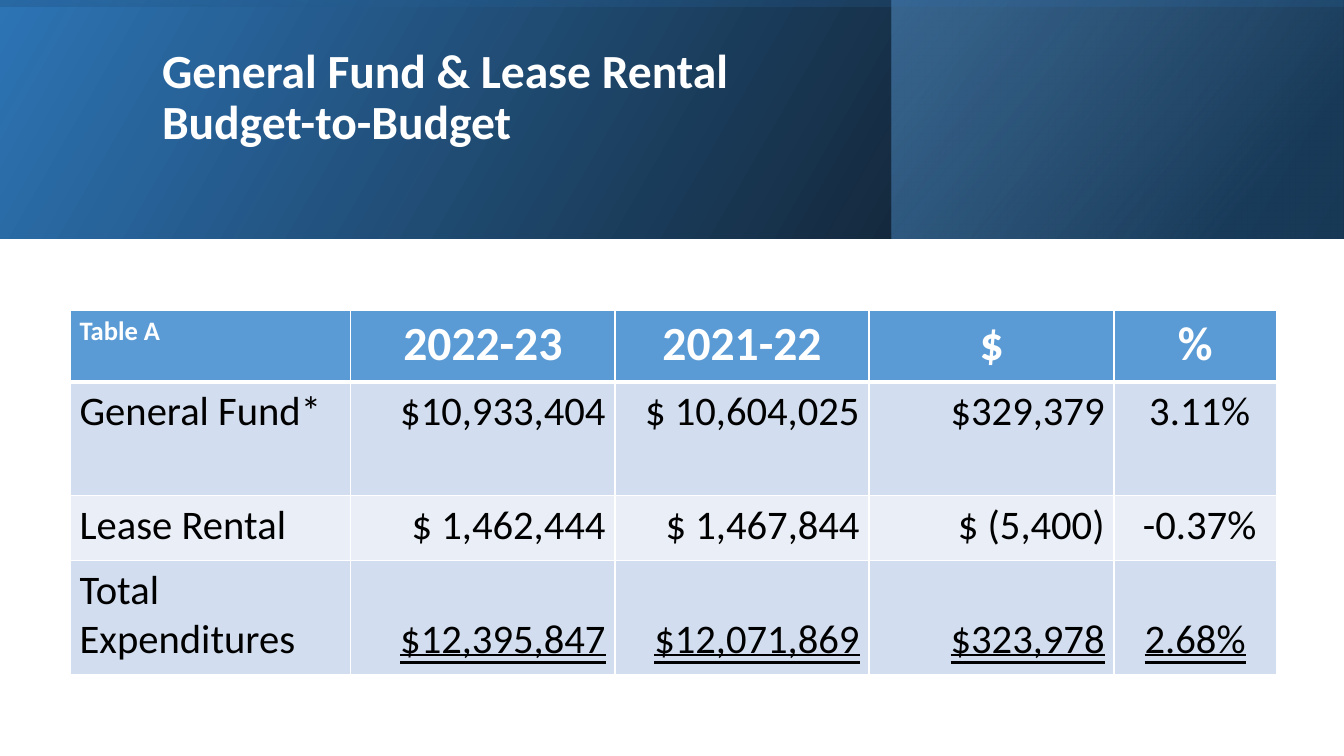
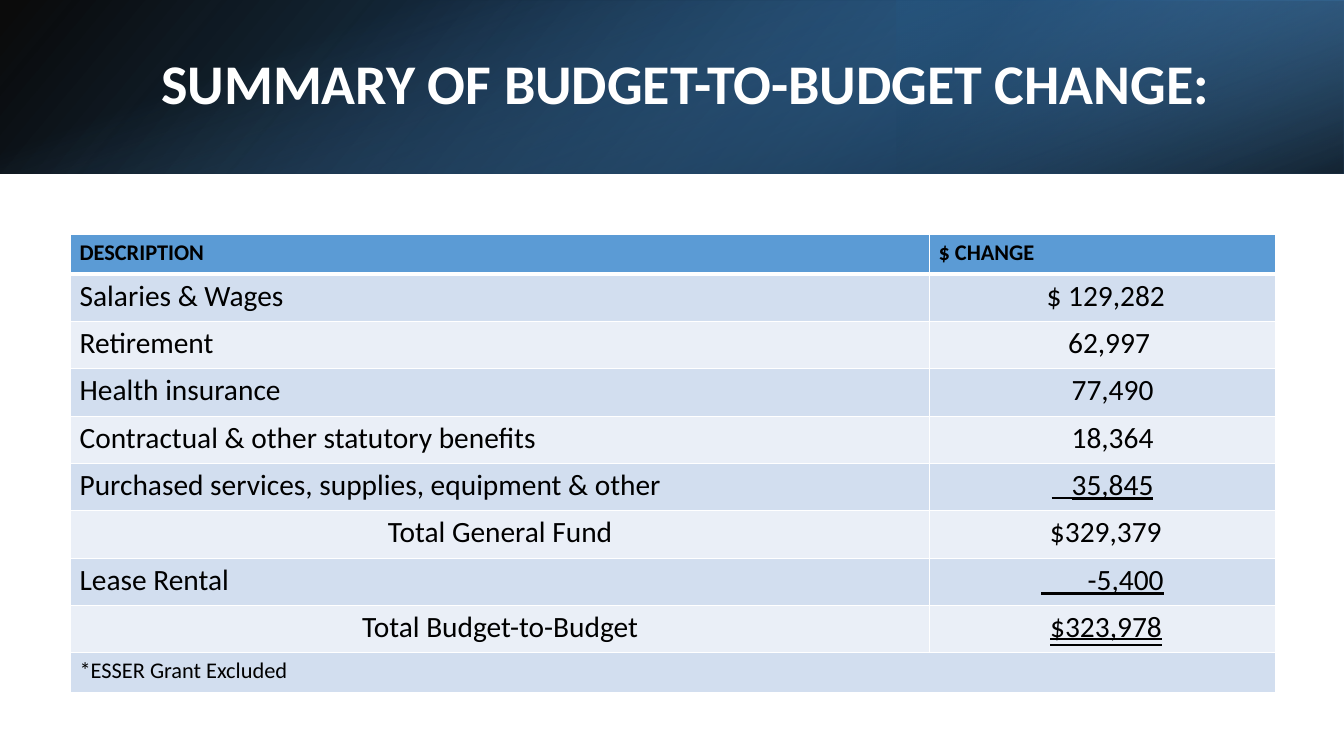
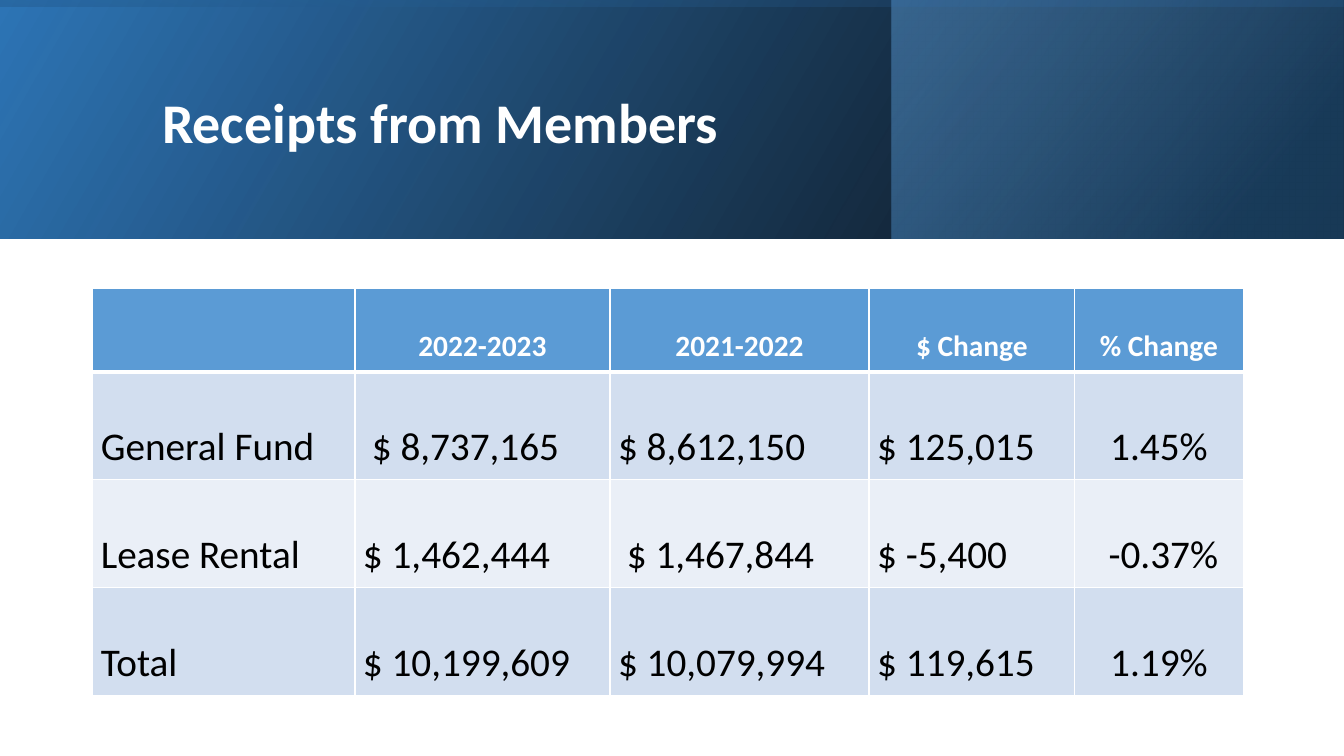
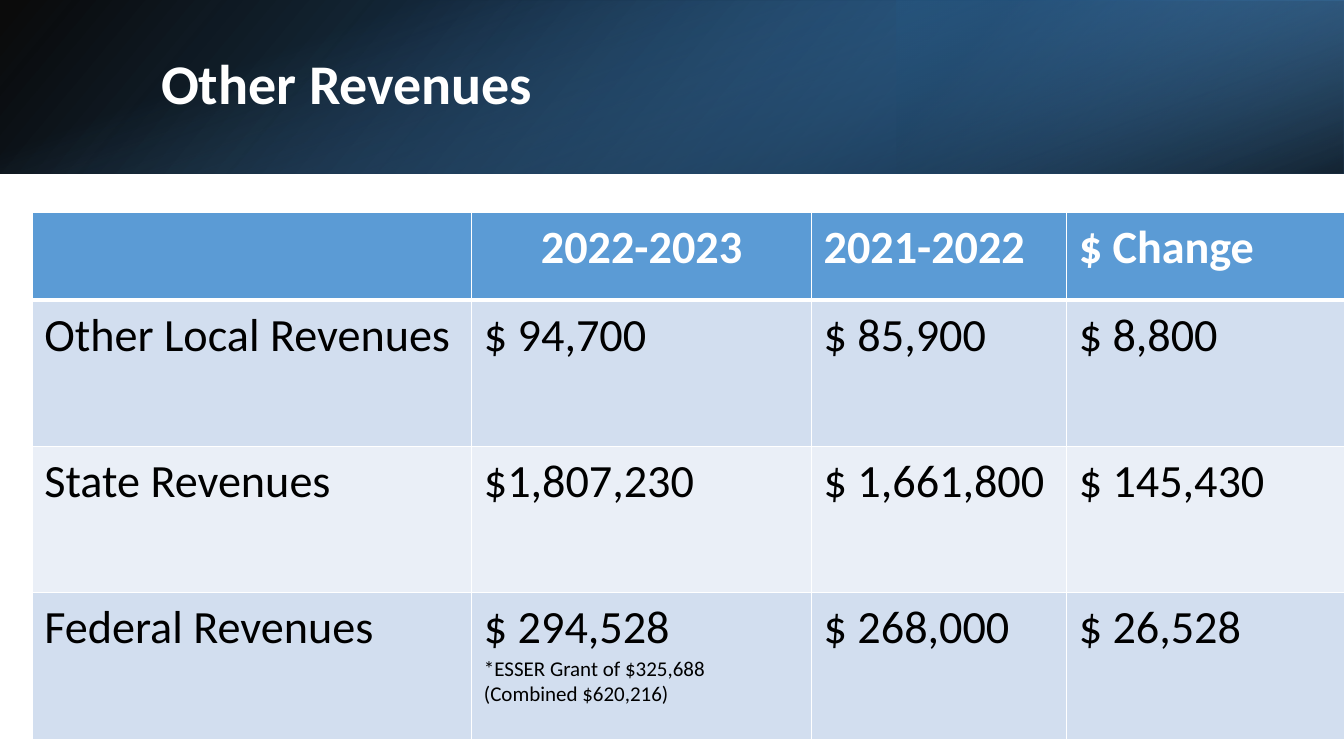
from dataclasses import dataclass

from lxml import etree
from pptx import Presentation
from pptx.dml.color import RGBColor
from pptx.enum.shapes import MSO_SHAPE
from pptx.enum.text import MSO_ANCHOR, MSO_UNDERLINE, PP_ALIGN
from pptx.oxml.ns import qn
from pptx.util import Pt

PX_PER_INCH = 100
EMU_PER_PX = 914400 // PX_PER_INCH
SLIDE_WIDTH, SLIDE_HEIGHT = 1333, 750
FONT, NARROW_FONT = "Calibri", "Arial Narrow"
LINE_HEIGHT = 1.22

WHITE = RGBColor(0xFF, 0xFF, 0xFF)
BLACK = RGBColor(0x00, 0x00, 0x00)
NAVY = RGBColor(0x1F, 0x4E, 0x79)
BLUE = RGBColor(0x2E, 0x75, 0xB6)
SKY = RGBColor(0x5B, 0x9B, 0xD5)
DARK_BAND = RGBColor(0xD2, 0xDE, 0xEF)
LIGHT_BAND = RGBColor(0xEA, 0xEF, 0xF7)

RECTANGLE = MSO_SHAPE.RECTANGLE
MIDDLE = MSO_ANCHOR.MIDDLE
LEFT, CENTER, RIGHT = PP_ALIGN.LEFT, PP_ALIGN.CENTER, PP_ALIGN.RIGHT
SINGLE, DOUBLE = MSO_UNDERLINE.SINGLE_LINE, MSO_UNDERLINE.DOUBLE_LINE


@dataclass
class Band:
    box: tuple
    stops: tuple
    angle: int
    rotation: int = 0
    flipped: bool = True


@dataclass
class Header:
    bands: tuple
    title_box: tuple


TALL_HEADER = Header(
    (
        Band((0, 0, 1333, 237), ((0, BLACK, 96), (100, BLUE, 100)), 330),
        Band((884, 0, 448, 237), ((19, NAVY, 68), (100, SKY, 48)), 320),
        Band((548, -548, 237, 1333), ((23, BLUE, 16), (99, BLACK, 45)), 350, 270),
    ),
    (151, 38, 1063, 172),
)
SHORT_HEADER = Header(
    (
        Band((0, 0, 1333, 172), ((0, BLACK, 96), (100, BLUE, 100)), 140),
        Band((889, 0, 444, 172), ((19, NAVY, 68), (100, SKY, 79)), 320, 180),
        Band((580, -580, 172, 1333), ((23, SKY, 0), (99, BLACK, 74)), 340, 90, False),
    ),
    (150, 38, 1098, 96),
)


def px(length):
    return length * EMU_PER_PX


def line_px(size):
    return round(size * LINE_HEIGHT / 72 * PX_PER_INCH)


def format_run(run, size, color=BLACK, bold=False, underline=None, font=FONT):
    run.font.name = font
    run.font.size = Pt(size)
    run.font.bold = bold
    run.font.underline = underline
    run.font.color.rgb = color


def add_band(slide, band):
    shape = slide.shapes.add_shape(RECTANGLE, *map(px, band.box))
    shape.shadow.inherit = False
    shape.line.fill.background()
    shape.rotation = band.rotation
    properties = shape._element.spPr
    if band.flipped:
        properties.find(qn("a:xfrm")).set("flipH", "1")
    shape.fill.gradient()
    shape.fill.gradient_angle = 360 - band.angle
    for stop, (position, color, _) in zip(shape.fill.gradient_stops, band.stops):
        stop.position = position / 100
        stop.color.rgb = color
    colors = properties.find(qn("a:gradFill")).iter(qn("a:srgbClr"))
    for color, (_, _, opacity) in zip(list(colors), band.stops):
        etree.SubElement(color, qn("a:alpha")).set("val", str(opacity * 1000))


def add_header(slide, header, title, size=40, lift=0):
    for band in header.bands:
        add_band(slide, band)
    frame = slide.shapes.add_textbox(*map(px, header.title_box)).text_frame
    frame.word_wrap = True
    frame.vertical_anchor = MIDDLE
    frame.margin_bottom = px(5 + lift)
    frame.text = title
    for paragraph in frame.paragraphs:
        paragraph.line_spacing = 0.9
        for run in paragraph.runs:
            format_run(run, size, WHITE, True)


def set_borders(cell, top, bottom):
    properties = cell._tc.get_or_add_tcPr()
    for side, width in (("L", 1), ("R", 1), ("T", top), ("B", bottom)):
        border = etree.SubElement(properties, qn(f"a:ln{side}"))
        border.set("w", str(Pt(width)))
        fill = etree.SubElement(border, qn("a:solidFill"))
        etree.SubElement(fill, qn("a:srgbClr")).set("val", str(WHITE))


def add_grid(slide, left, top, columns, rows, margins):
    grid = slide.shapes.add_table(
        len(rows), len(columns), px(left), px(top), px(sum(columns)), px(sum(rows))
    ).table
    for column, width in zip(grid.columns, columns):
        column.width = px(width)
    side, edge = margins
    for index, (row, height) in enumerate(zip(grid.rows, rows)):
        row.height = px(height)
        band = SKY if index == 0 else DARK_BAND if index % 2 else LIGHT_BAND
        for cell in row.cells:
            cell.margin_left = cell.margin_right = px(side)
            cell.margin_top = cell.margin_bottom = px(edge)
            set_borders(cell, 3 if index == 1 else 1, 3 if index == 0 else 1)
            cell.fill.solid()
            cell.fill.fore_color.rgb = band
    return grid


def write_cell(cell, text, align, size, color=BLACK, bold=False, underline=None, drop=0, indent=0):
    cell.margin_top += px(drop)
    cell.margin_left += px(indent)
    cell.text_frame.text = text
    for paragraph in cell.text_frame.paragraphs:
        paragraph.alignment = align
        for run in paragraph.runs:
            format_run(run, size, color, bold, underline)


def write_row(row, texts, aligns, size, **style):
    for cell, text, align in zip(row.cells, texts, aligns):
        if text:
            write_cell(cell, text, align, size, **style)


def add_budget_slide(slide):
    add_header(slide, TALL_HEADER, "General Fund & Lease Rental\nBudget-to-Budget", 34, 52)
    grid = add_grid(slide, 70, 308, (278, 262, 252, 243, 161), (71, 113, 64, 113), (9, 5))
    heading, general, lease, total = grid.rows
    aligns = (LEFT, RIGHT, RIGHT, RIGHT, CENTER)
    write_cell(heading.cells[0], "Table A", LEFT, 19, WHITE, True)
    write_row(heading, ("", "2022-23", "2021-22", "$", "%"), (CENTER,) * 5, 34,
              color=WHITE, bold=True)
    write_row(general, ("General Fund*", "$10,933,404", "$ 10,604,025", "$329,379", " 3.11%"),
              aligns, 29)
    write_row(lease, ("Lease Rental", "$ 1,462,444", "$ 1,467,844", "$ (5,400)", " -0.37%"),
              aligns, 29)
    write_cell(total.cells[0], "Total Expenditures", LEFT, 29)
    write_row(total, ("", "$12,395,847", "$12,071,869", "$323,978", "2.68%"), aligns, 29,
              underline=DOUBLE, drop=line_px(29))


def add_summary_slide(slide):
    add_header(slide, SHORT_HEADER, "SUMMARY OF BUDGET-TO-BUDGET CHANGE:")
    grid = add_grid(slide, 70, 233, (852, 343), (39, *(47,) * 8, 39), (9, 4))
    write_row(grid.rows[0], ("DESCRIPTION", "$ CHANGE"), (LEFT, LEFT), 16, bold=True)
    changes = (
        ("Salaries & Wages", LEFT, " $ 129,282", None, 0),
        ("Retirement", LEFT, "62,997", None, 13),
        ("Health insurance", LEFT, "77,490", None, 20),
        ("Contractual & other statutory benefits", LEFT, "18,364", None, 20),
        ("Purchased services, supplies, equipment & other", LEFT, "   ", SINGLE, 0),
        ("Total General Fund", CENTER, " $329,379", None, 0),
        ("Lease Rental", LEFT, "       -5,400", SINGLE, 0),
        ("Total Budget-to-Budget", CENTER, "$323,978", DOUBLE, 7),
    )
    for index, (description, align, change, underline, indent) in enumerate(changes, 1):
        write_cell(grid.cell(index, 0), description, align, 21)
        write_cell(grid.cell(index, 1), change, CENTER, 21, underline=underline, indent=indent)
    purchases = grid.cell(5, 1).text_frame.paragraphs[0]
    purchases.runs[0].font.name = NARROW_FONT
    amount = purchases.add_run()
    amount.text = "35,845"
    format_run(amount, 21, underline=SINGLE)
    footnote = grid.cell(9, 0)
    footnote.merge(grid.cell(9, 1))
    write_cell(footnote, "*ESSER Grant Excluded", LEFT, 16)


def add_receipts_slide(slide):
    add_header(slide, TALL_HEADER, "Receipts from Members")
    grid = add_grid(slide, 92, 286, (260, 253, 257, 204, 167), (83, 107, 107, 107), (8, 4))
    write_row(grid.rows[0], ("", "2022-2023", "2021-2022", "$ Change", "% Change"),
              (CENTER,) * 5, 21, color=WHITE, bold=True, drop=line_px(21))
    receipts = (
        ("General Fund", " $ 8,737,165", "$ 8,612,150", "$ 125,015", "1.45%"),
        ("Lease Rental", "$ 1,462,444", " $ 1,467,844", "$ -5,400", " -0.37%"),
        ("Total", "$ 10,199,609", "$ 10,079,994", "$ 119,615", "1.19%"),
    )
    for index, texts in enumerate(receipts, 1):
        write_row(grid.rows[index], texts, (LEFT,) * 4 + (CENTER,), 28, drop=line_px(28))


def add_revenues_slide(slide):
    add_header(slide, SHORT_HEADER, "Other Revenues")
    grid = add_grid(slide, 32, 211, (436, 337, 253, 285), (87, 145, 145, 146), (12, 7))
    write_row(grid.rows[0], ("", "2022-2023", "2021-2022", "$ Change"),
              (LEFT, CENTER, LEFT, LEFT), 33, color=WHITE, bold=True)
    revenues = (
        ("Other Local Revenues", "$ 94,700", "$ 85,900", "$ 8,800"),
        ("State Revenues", "$1,807,230", "$ 1,661,800", "$ 145,430"),
        ("Federal Revenues", "$ 294,528", "$ 268,000", "$ 26,528"),
    )
    for index, texts in enumerate(revenues, 1):
        write_row(grid.rows[index], texts, (LEFT,) * 4, 33)
    grant = grid.cell(3, 1).text_frame.add_paragraph()
    grant.text = "*ESSER Grant of $325,688 (Combined $620,216)"
    format_run(grant.runs[0], 15)


def main():
    deck = Presentation()
    deck.slide_width, deck.slide_height = px(SLIDE_WIDTH), px(SLIDE_HEIGHT)
    blank = deck.slide_layouts[6]
    for build in (add_budget_slide, add_summary_slide, add_receipts_slide, add_revenues_slide):
        build(deck.slides.add_slide(blank))
    deck.save("out.pptx")


if __name__ == "__main__":
    main()
